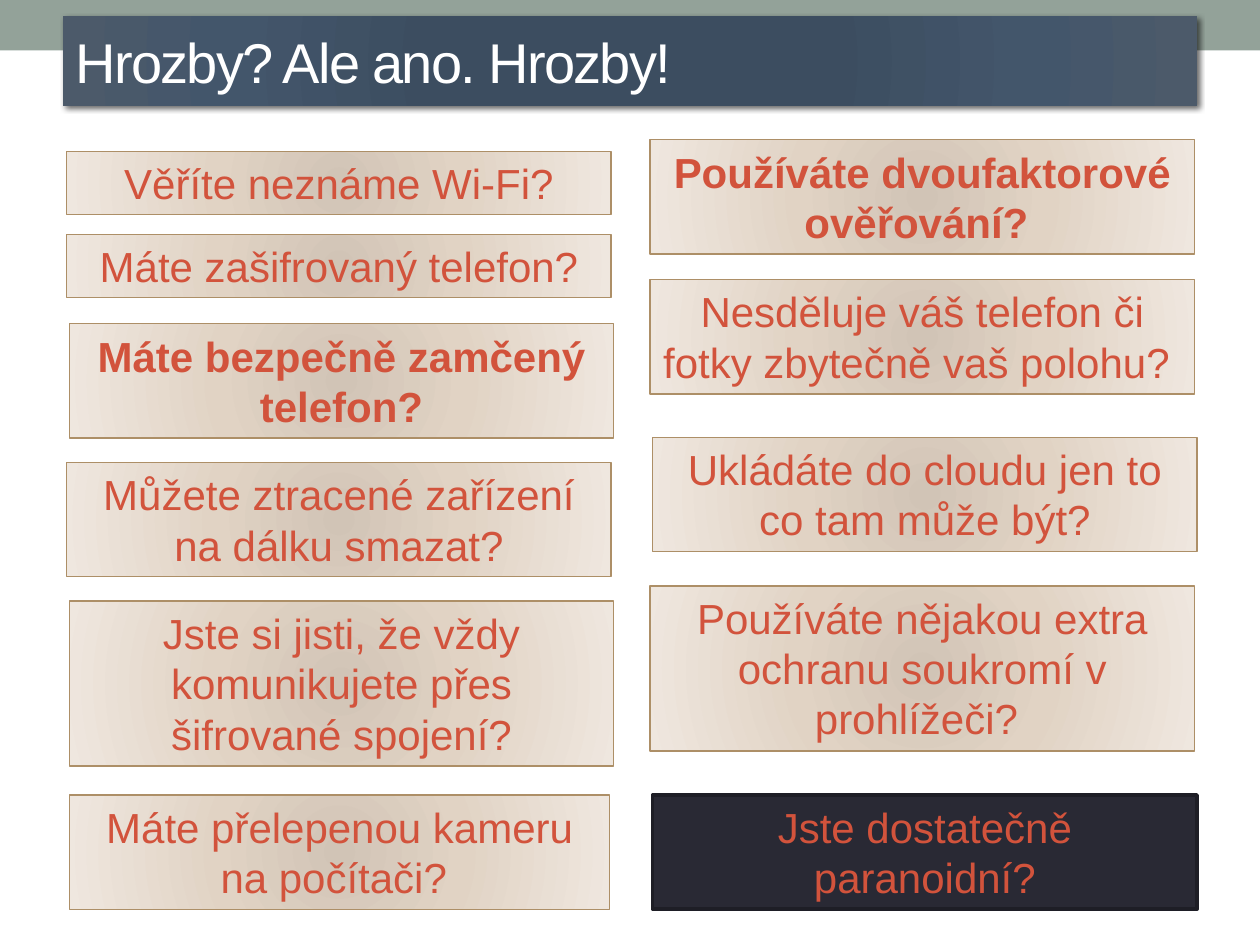
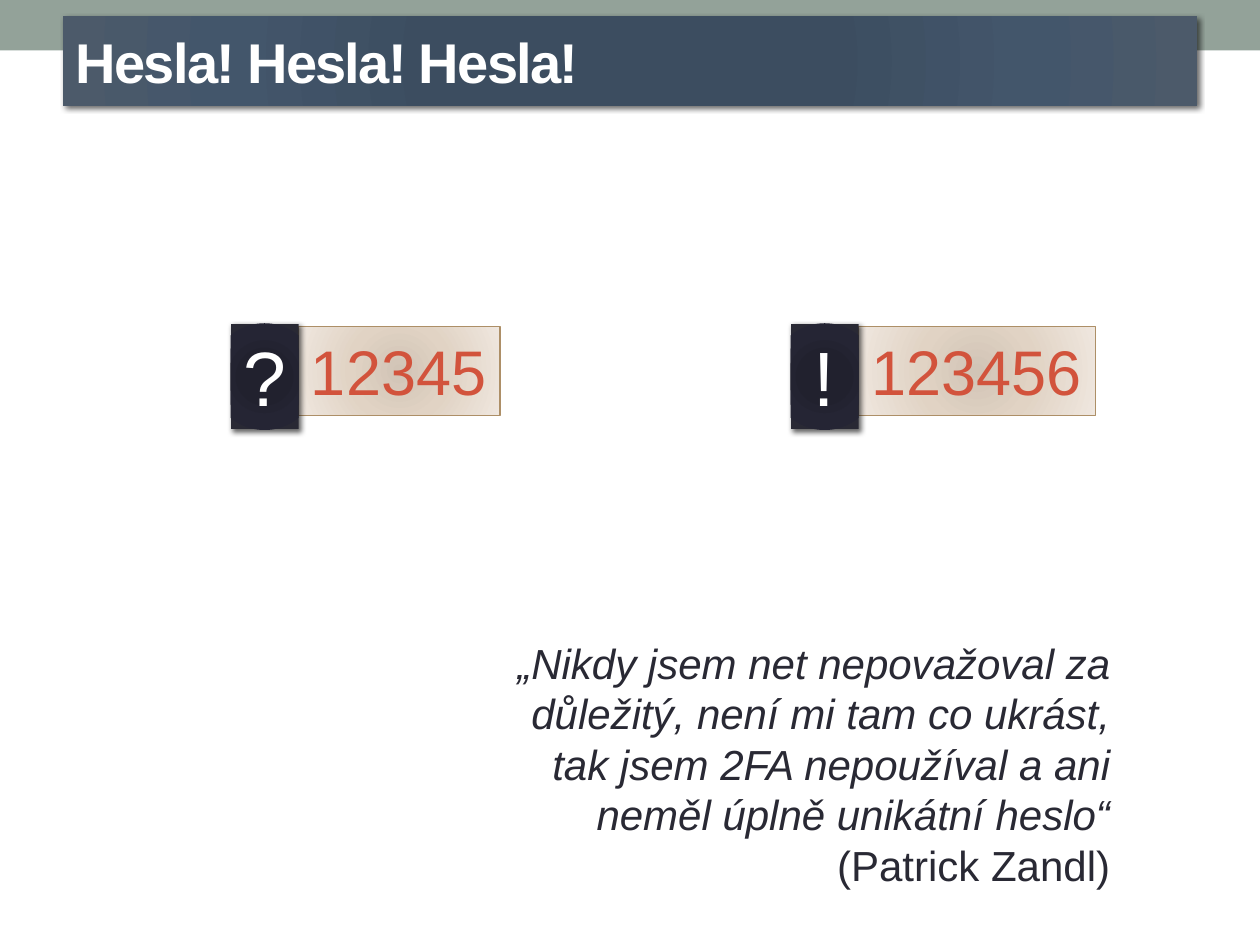
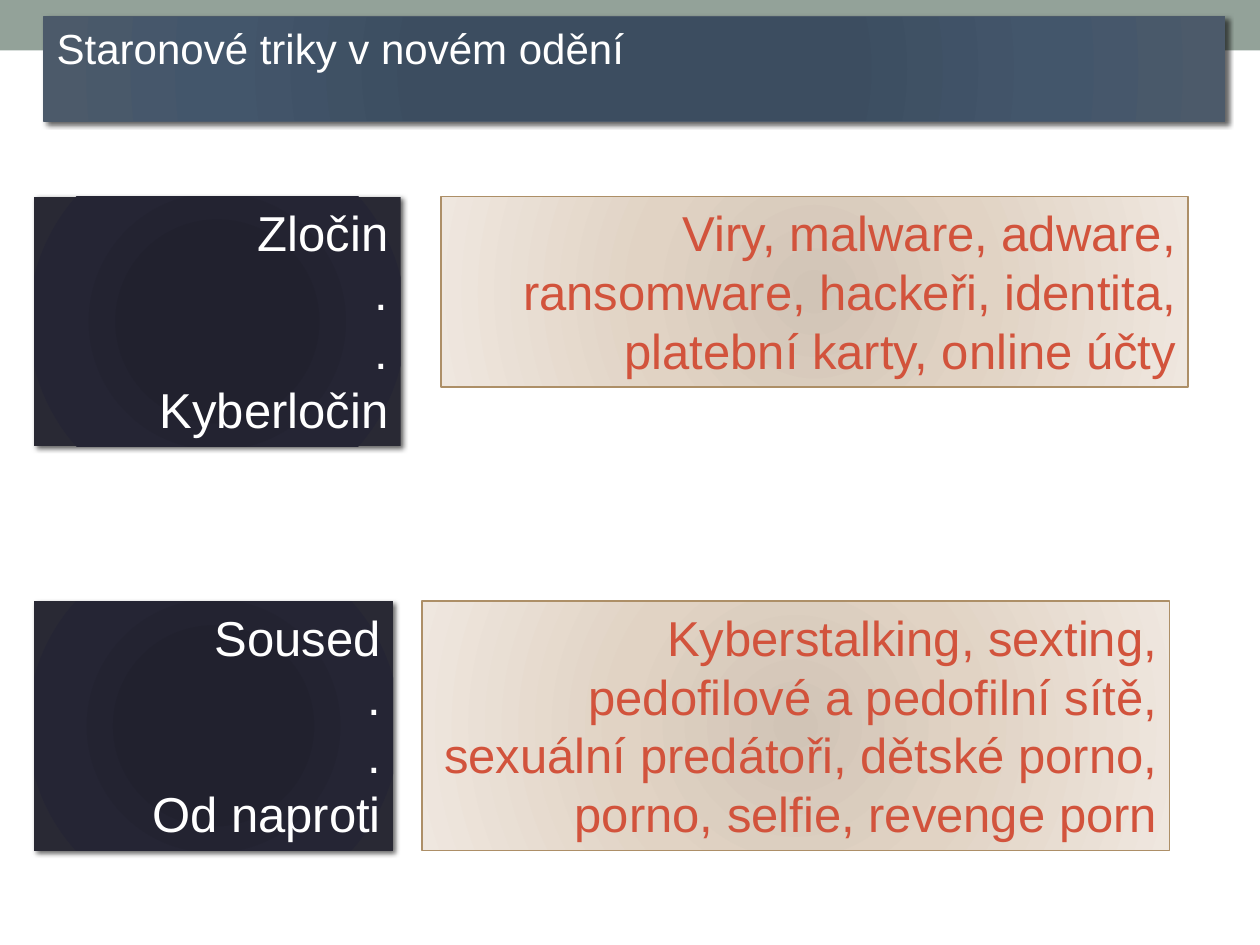
from pptx import Presentation
from pptx.dml.color import RGBColor
from pptx.enum.shapes import MSO_SHAPE
from pptx.enum.text import MSO_ANCHOR, MSO_AUTO_SIZE, PP_ALIGN
from pptx.oxml import parse_xml
from pptx.oxml.ns import nsdecls, qn
from pptx.util import Inches, Pt

RECTANGLE = MSO_SHAPE.RECTANGLE
TOP, MIDDLE = MSO_ANCHOR.TOP, MSO_ANCHOR.MIDDLE
GROW, FIXED = MSO_AUTO_SIZE.SHAPE_TO_FIT_TEXT, MSO_AUTO_SIZE.NONE
LEFT, CENTER, RIGHT = PP_ALIGN.LEFT, PP_ALIGN.CENTER, PP_ALIGN.RIGHT

COLORS = {
    "band": "93A299",
    "white": "FFFFFF",
    "accent": "D2533C",
    "dark": "292934",
    "dark_line": "1E1E26",
    "sand_line": "AD8F67",
    "title_line": "4C5A6A",
}
GRADIENTS = {
    "title": {0: "3B4D61", 34: "3C4D60", 70: "43566B", 100: "4C5A6A"},
    "sand": {0: "D1C4B6", 45: "E1D3C4", 100: "EFE7DF"},
    "night": {0: "21212F", 34: "21212E", 70: "252534", 100: "292934"},
}
FONT = "Arial"
COLUMNS, ROWS = 100, 75
LINE_HEIGHT = 1.21
TITLE_ONLY = 5


def color(name):
    return RGBColor.from_string(COLORS[name])


def write(frame, text, size=24, ink="accent", align=CENTER, bold=False, italic=False,
          tail="", spacing=0, anchor=TOP, wrap=True, fit=GROW):
    frame.word_wrap = wrap
    frame.auto_size = fit
    frame.vertical_anchor = anchor
    for index, line in enumerate(text.split("\n")):
        paragraph = frame.add_paragraph() if index else frame.paragraphs[0]
        paragraph.alignment = align
        for part, slanted in ((line, italic), (tail, False)):
            if not part:
                continue
            run = paragraph.add_run()
            run.text = part
            font = run.font
            font.name, font.size = FONT, Pt(size)
            font.bold, font.italic = bold, slanted
            font.color.rgb = color(ink)
            if spacing:
                font._element.set("spc", str(spacing * 100))


class Deck:
    def __init__(self):
        self.presentation = Presentation()
        self.presentation.slide_width = Inches(10)
        self.presentation.slide_height = Inches(7.5)
        self.layout = self.presentation.slide_layouts[TITLE_ONLY]
        self.slide = None

    def place(self, column, row, width, height):
        across = self.presentation.slide_width / COLUMNS
        down = self.presentation.slide_height / ROWS
        return [round(length) for length in
                (column * across, row * down, width * across, height * down)]

    def height(self, lines, size):
        return 1 + lines * size * LINE_HEIGHT / 7.2

    def paint(self, shape, fill, line=None, line_width=0.75, shadow=False):
        if fill in GRADIENTS:
            shape.fill.gradient()
            gradient = shape.element.spPr.find(qn("a:gradFill"))
            stops = "".join(
                f'<a:gs pos="{position * 1000}"><a:srgbClr val="{value}"/></a:gs>'
                for position, value in GRADIENTS[fill].items())
            gradient.getparent().replace(gradient, parse_xml(
                f'<a:gradFill rotWithShape="1" {nsdecls("a")}><a:gsLst>{stops}</a:gsLst>'
                '<a:path path="circle"><a:fillToRect l="100000" t="100000" '
                'r="100000" b="100000"/></a:path></a:gradFill>'))
        else:
            shape.fill.solid()
            shape.fill.fore_color.rgb = color(fill)
        if line:
            shape.line.color.rgb = color(line)
            shape.line.width = Pt(line_width)
        else:
            shape.line.fill.background()
        shape.shadow.inherit = False
        if shadow:
            shape.element.spPr.find(qn("a:effectLst")).append(parse_xml(
                f'<a:outerShdw {nsdecls("a")} blurRad="{Pt(3)}" dist="{Pt(2)}" '
                'dir="2700000" rotWithShape="0"><a:srgbClr val="000000">'
                '<a:alpha val="60000"/></a:srgbClr></a:outerShdw>'))

    def rectangle(self, column, row, width, height):
        return self.slide.shapes.add_shape(
            RECTANGLE, *self.place(column, row, width, height))

    def band(self):
        band = self.rectangle(0, 0, COLUMNS, 4)
        self.paint(band, "band")
        band.element.nvSpPr.cNvPr.set("id", "20")
        self.layout.placeholders[0].element.addprevious(band.element)

    def title_slide(self, text, column=5, width=90, height=7.1, line=None, **style):
        first = self.slide is None
        self.slide = self.presentation.slides.add_slide(self.layout)
        if first:
            self.band()
        title = self.slide.shapes.title
        title.left, title.top, title.width, title.height = self.place(
            column, 1.3, width, height)
        self.paint(title, "title", line, shadow=True)
        write(title.text_frame, text, ink="white", align=LEFT, **style)

    def card(self, text, column, row, width, lines=1, size=24,
             fill="sand", line="sand_line", line_width=0.75, **style):
        shape = self.rectangle(column, row, width, self.height(lines, size))
        self.paint(shape, fill, line, line_width)
        write(shape.text_frame, text, size=size, **style)

    def dark_card(self, text, column, row, width, lines=1, size=24, **style):
        shape = self.rectangle(column, row, width, self.height(lines, size))
        self.paint(shape, "night", shadow=True)
        write(shape.text_frame, text, size=size, ink="white", **style)

    def text(self, text, column, row, width, lines, **style):
        box = self.slide.shapes.add_textbox(
            *self.place(column, row, width, self.height(lines, 24)))
        write(box.text_frame, text, **style)


def threats(deck):
    deck.title_slide("Hrozby? Ale ano. Hrozby!", size=32, spacing=-1,
                     anchor=MIDDLE, fit=FIXED)
    questions = [
        (5.3, 12, 1, "Věříte neznáme Wi-Fi?", {}),
        (5.3, 18.6, 1, "Máte zašifrovaný telefon?", {}),
        (5.5, 25.7, 2, "Máte bezpečně zamčený telefon?", {"bold": True}),
        (5.3, 36.7, 2, "Můžete ztracené zařízení na dálku smazat?", {}),
        (5.5, 47.7, 3, "Jste si jisti, že vždy komunikujete přes šifrované spojení?", {}),
        (51.6, 11.1, 2, "Používáte dvoufaktorové ověřování? ", {"bold": True}),
        (51.6, 22.2, 2, "Nesděluje váš telefon či fotky zbytečně vaš polohu? ", {}),
        (51.8, 34.7, 2, "Ukládáte do cloudu jen to co tam může být?", {}),
        (51.6, 46.5, 3, "Používáte nějakou extra ochranu soukromí v prohlížeči? ", {}),
        (51.8, 63.1, 2, "Jste dostatečně paranoidní?",
         {"fill": "dark", "line": "dark_line", "line_width": 2.08}),
        (5.5, 63.1, 2, "Máte přelepenou kameru na počítači? ", {"width": 42.9}),
    ]
    for column, row, lines, question, style in questions:
        deck.card(question, column, row, lines=lines, **{"width": 43.2, **style})


def passwords(deck):
    deck.title_slide("Hesla! Hesla! Hesla!", size=32, spacing=-1, bold=True,
                     anchor=MIDDLE, fit=FIXED)
    for mark, column, password, width in (("?", 18.3, "12345", 16),
                                          ("!", 62.75, "123456", 18.8)):
        deck.card(password, column + 5.4, 25.9, width, size=36, align=LEFT, wrap=False)
        deck.dark_card(mark, column, 25.7, 5.4, size=44)
    deck.text("„Nikdy jsem net nepovažoval za důležitý, není mi tam co ukrást, "
              "tak jsem 2FA nepoužíval a ani neměl úplně unikátní heslo“",
              39.1, 50.1, 50, 5, ink="dark", align=RIGHT, italic=True,
              tail=" (Patrick Zandl)")


def tricks(deck):
    deck.title_slide("Staronové triky v novém odění", column=3.5, width=93.7,
                     height=deck.height(1, 24), line="title_line")
    groups = [
        (15.6, "Zločin\n.\n.\nKyberločin", 29.1, 35, 3,
         "Viry, malware, adware, ransomware, hackeři, identita, "
         "platební karty, online účty"),
        (47.7, "Soused\n.\n.\nOd naproti", 28.5, 33.5, 4,
         "Kyberstalking, sexting, pedofilové a pedofilní sítě, "
         "sexuální predátoři, dětské porno, porno, selfie, revenge porn"),
    ]
    for row, source, source_width, column, lines, examples in groups:
        deck.dark_card(source, 2.7, row, source_width, lines=4, size=28, align=RIGHT)
        deck.card(examples, column, row, 59.3, lines=lines, size=28, align=RIGHT)


def main():
    deck = Deck()
    for build in (threats, passwords, tricks):
        build(deck)
    deck.presentation.save("out.pptx")


if __name__ == "__main__":
    main()
